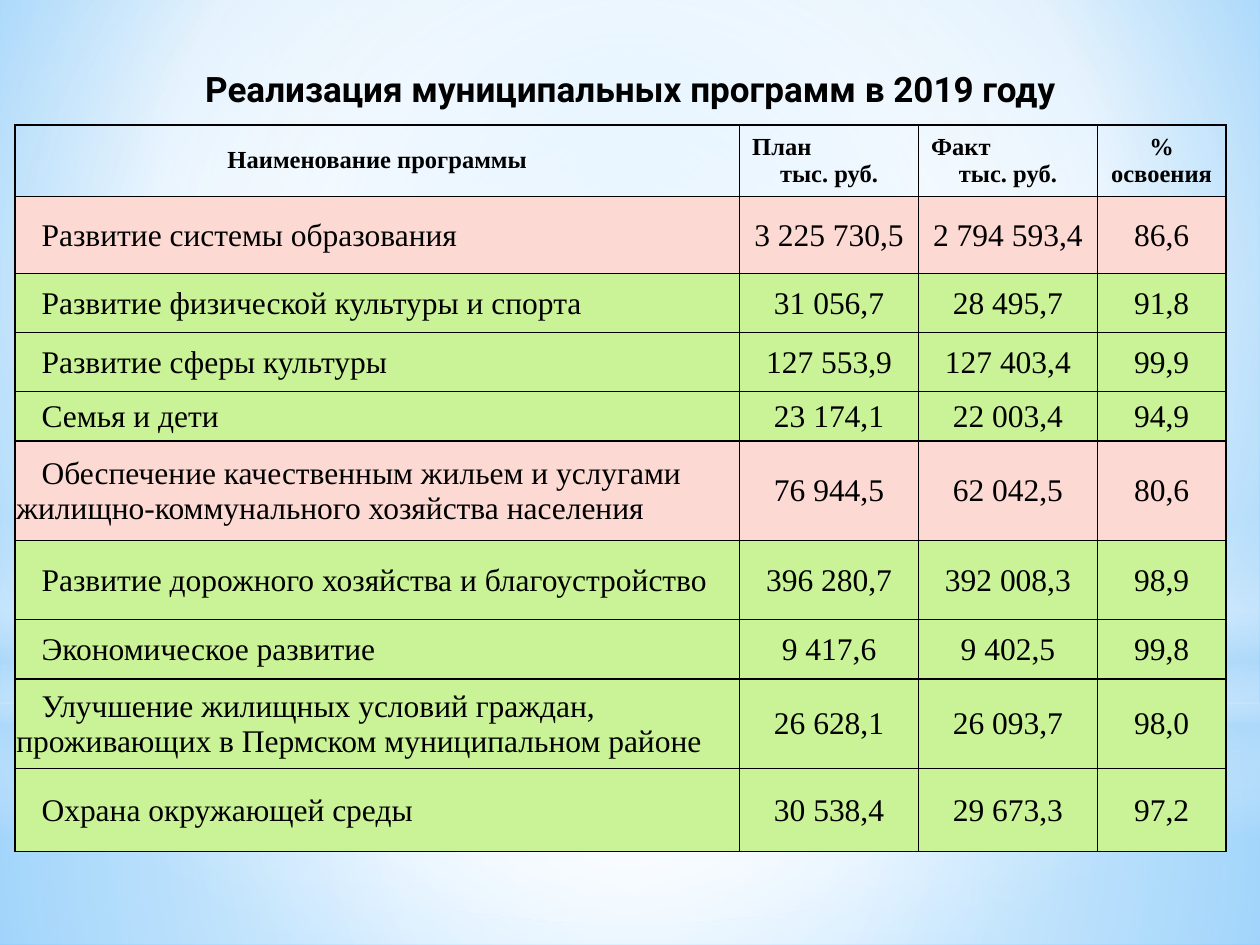
from dataclasses import dataclass

from lxml import etree
from pptx import Presentation
from pptx.dml.color import RGBColor
from pptx.enum.shapes import MSO_SHAPE
from pptx.enum.text import MSO_ANCHOR, PP_ALIGN
from pptx.oxml import parse_xml
from pptx.oxml.ns import nsdecls, qn
from pptx.util import Inches, Pt

RECT, OVAL = MSO_SHAPE.RECTANGLE, MSO_SHAPE.OVAL
LEFT, CENTER = PP_ALIGN.LEFT, PP_ALIGN.CENTER
MIDDLE = MSO_ANCHOR.MIDDLE


@dataclass(frozen=True)
class Theme:
    title_font: str = "Roboto"
    table_font: str = "Times New Roman"
    title_size: int = 20
    header_size: int = 14
    body_size: int = 18
    ink: str = "000000"
    low: str = "FCD9D3"
    high: str = "CAF297"
    white: str = "FFFFFF"
    haze: str = "B4DCFA"
    sky: str = "9ED5FF"
    deep_sky: str = "5BB9FF"


THEME = Theme()
WIDTH, HEIGHT = 10, 7.5
LOW_LIMIT = 90
COLUMNS = [5.75, 1.42, 1.42, 1.02]
ROWS = [0.57, 0.61, 0.47, 0.47, 0.39, 0.79, 0.63, 0.47, 0.71, 0.66]
HEADER = [["Наименование программы"], ["План", "тыс. руб."],
          ["Факт", "тыс. руб."], ["% освоения"]]
PROGRAMS = [
    ("Развитие системы образования", "3 225 730,5", "2 794 593,4", "86,6"),
    ("Развитие физической культуры и спорта", "31 056,7", "28 495,7", "91,8"),
    ("Развитие сферы культуры", "127 553,9", "127 403,4", "99,9"),
    ("Семья и дети", "23 174,1", "22 003,4", "94,9"),
    ("Обеспечение качественным жильем и услугами жилищно-коммунального хозяйства населения",
     "76 944,5", "62 042,5", "80,6"),
    ("Развитие дорожного хозяйства и благоустройство", "396 280,7", "392 008,3", "98,9"),
    ("Экономическое развитие", "9 417,6", "9 402,5", "99,8"),
    ("Улучшение жилищных условий граждан, проживающих в Пермском муниципальном районе",
     "26 628,1", "26 093,7", "98,0"),
    ("Охрана окружающей среды", "30 538,4", "29 673,3", "97,2"),
]


def gradient(stops, focus=None):
    marks = "".join(
        f'<a:gs pos="{pos * 1000}"><a:srgbClr val="{color}">'
        f'<a:alpha val="{alpha * 1000}"/></a:srgbClr></a:gs>'
        for pos, color, alpha in stops)
    if focus:
        sides = " ".join(f'{k}="{v * 1000}"' for k, v in zip("ltrb", focus))
        course = f'<a:path path="circle"><a:fillToRect {sides}/></a:path>'
    else:
        course = '<a:lin ang="5400000" scaled="0"/>'
    return parse_xml(f'<a:gradFill {nsdecls("a")} rotWithShape="1">'
                     f'<a:gsLst>{marks}</a:gsLst>{course}</a:gradFill>')


def set_background(slide):
    slide.background.fill.solid()
    solid = slide.background._cSld.find(".//" + qn("a:solidFill"))
    stops = [(0, THEME.sky, 100), (60, THEME.white, 100), (100, THEME.deep_sky, 100)]
    solid.getparent().replace(solid, gradient(stops, (20, 10, 20, 60)))


def add_glow(slide, kind, top, height, stops, focus=None):
    sp = slide.shapes.add_shape(kind, 0, Inches(HEIGHT * top),
                                Inches(WIDTH), Inches(HEIGHT * height))
    sp.shadow.inherit = False
    sp.line.fill.background()
    sp.fill.solid()
    solid = sp._element.spPr.find(qn("a:solidFill"))
    solid.getparent().replace(solid, gradient(stops, focus))


def add_glows(slide):
    white, haze, middle = THEME.white, THEME.haze, (50, 50, 50, 50)
    add_glow(slide, RECT, 0.744, 0.256,
             [(0, white, 91), (37, white, 76), (100, haze, 79)], middle)
    add_glow(slide, RECT, 0, 0.744,
             [(0, white, 89), (48, white, 62), (100, haze, 79)], middle)
    add_glow(slide, RECT, 0.55, 0.333,
             [(0, white, 0), (29, white, 30), (45, haze, 40),
              (55, white, 26), (65, haze, 60), (100, white, 0)])
    add_glow(slide, OVAL, 0.233, 0.744, [(0, white, 100), (56, white, 0)], middle)


def style_paragraph(p, font, size, bold, align):
    p.alignment = align
    p.font.name, p.font.size, p.font.bold = font, Pt(size), bold
    p.font.color.rgb = RGBColor.from_string(THEME.ink)


def set_title(slide, text):
    title = slide.shapes.title
    title.left, title.top = Inches(0.55), Inches(0.47)
    title.width, title.height = Inches(8.91), Inches(0.47)
    tf = title.text_frame
    tf.text, tf.vertical_anchor = text, MIDDLE
    style_paragraph(tf.paragraphs[0], THEME.title_font, THEME.title_size, True, CENTER)
    slide.shapes._spTree.append(title._element)


def add_borders(cell):
    tcPr = cell._tc.get_or_add_tcPr()
    for side in "LRTB":
        ln = etree.SubElement(tcPr, qn(f"a:ln{side}"), w=str(Pt(1)))
        fill = etree.SubElement(ln, qn("a:solidFill"))
        etree.SubElement(fill, qn("a:srgbClr"), val=THEME.ink)


def set_margins(cell, side, top, bottom):
    cell.margin_left = cell.margin_right = Inches(side)
    cell.margin_top, cell.margin_bottom = Inches(top), Inches(bottom)


def fill_header(cell, lines):
    add_borders(cell)
    cell.fill.background()
    cell.vertical_anchor = MIDDLE
    set_margins(cell, 0.1, 0.05, 0.05)
    cell.text = "\n".join(lines)
    for i, p in enumerate(cell.text_frame.paragraphs, 1):
        align = CENTER if i == len(lines) else LEFT
        style_paragraph(p, THEME.table_font, THEME.header_size, True, align)


def fill_body(cell, text, color, is_name):
    add_borders(cell)
    cell.fill.solid()
    cell.fill.fore_color.rgb = RGBColor.from_string(color)
    cell.vertical_anchor = MIDDLE
    set_margins(cell, 0.01, 0.01, 0)
    cell.text = text
    p = cell.text_frame.paragraphs[0]
    style_paragraph(p, THEME.table_font, THEME.body_size, False,
                    LEFT if is_name else CENTER)
    if is_name:
        p._p.get_or_add_pPr().set("indent", str(Inches(0.2)))


def add_programs(slide):
    frame = slide.shapes.add_table(len(ROWS), len(COLUMNS), Inches(0.12), Inches(0.99),
                                   Inches(sum(COLUMNS)), Inches(sum(ROWS)))
    table = frame.table
    table.first_row = table.horz_banding = False
    for column, width in zip(table.columns, COLUMNS):
        column.width = Inches(width)
    for row, height in zip(table.rows, ROWS):
        row.height = Inches(height)
    for c, lines in enumerate(HEADER):
        fill_header(table.cell(0, c), lines)
    for r, program in enumerate(PROGRAMS, 1):
        share = float(program[-1].replace(",", "."))
        color = THEME.low if share < LOW_LIMIT else THEME.high
        for c, text in enumerate(program):
            fill_body(table.cell(r, c), text, color, c == 0)


def main():
    prs = Presentation()
    prs.slide_width, prs.slide_height = Inches(WIDTH), Inches(HEIGHT)
    slide = prs.slides.add_slide(prs.slide_layouts[5])
    set_background(slide)
    add_glows(slide)
    set_title(slide, "Реализация муниципальных программ в 2019 году")
    add_programs(slide)
    prs.save("out.pptx")


if __name__ == "__main__":
    main()
